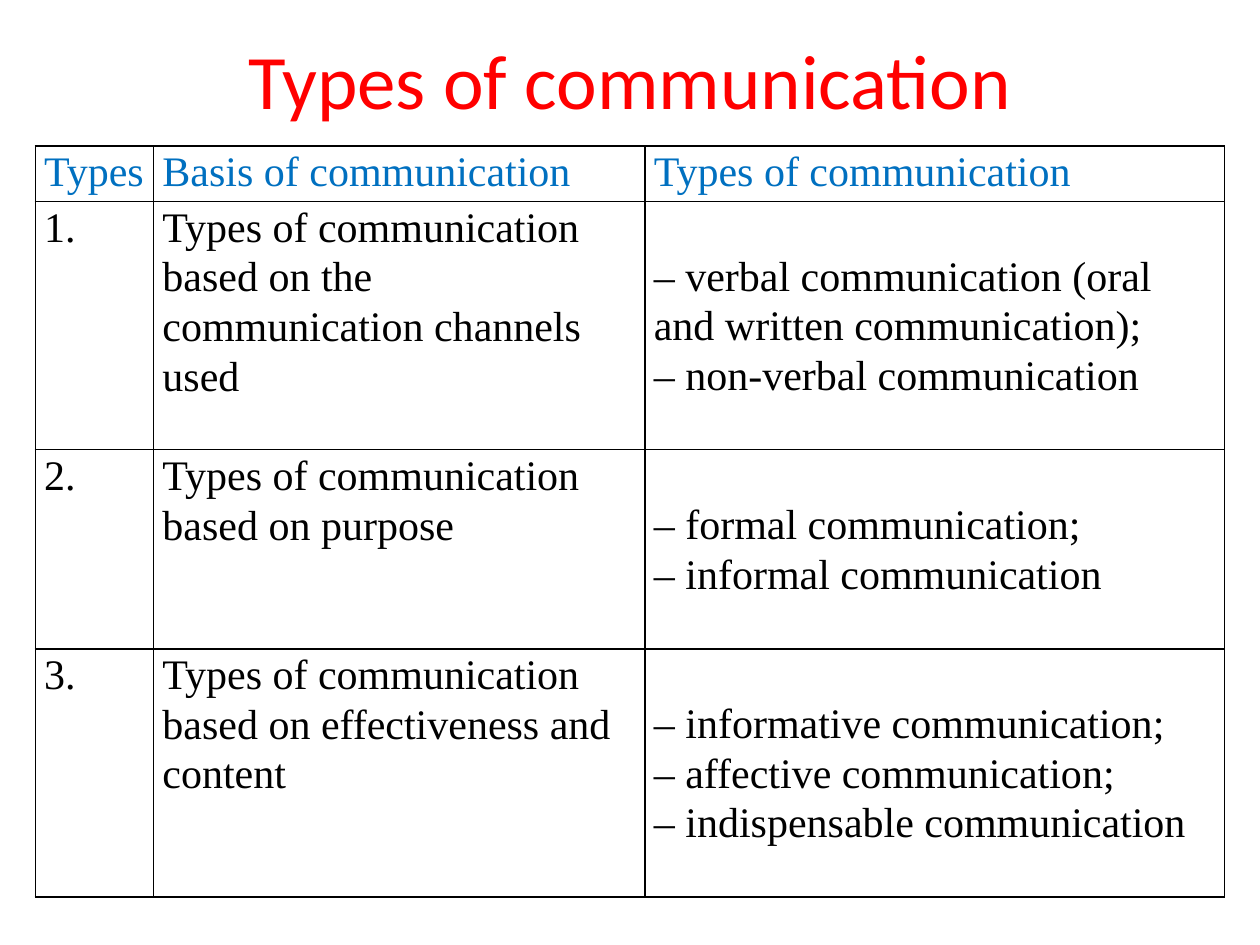
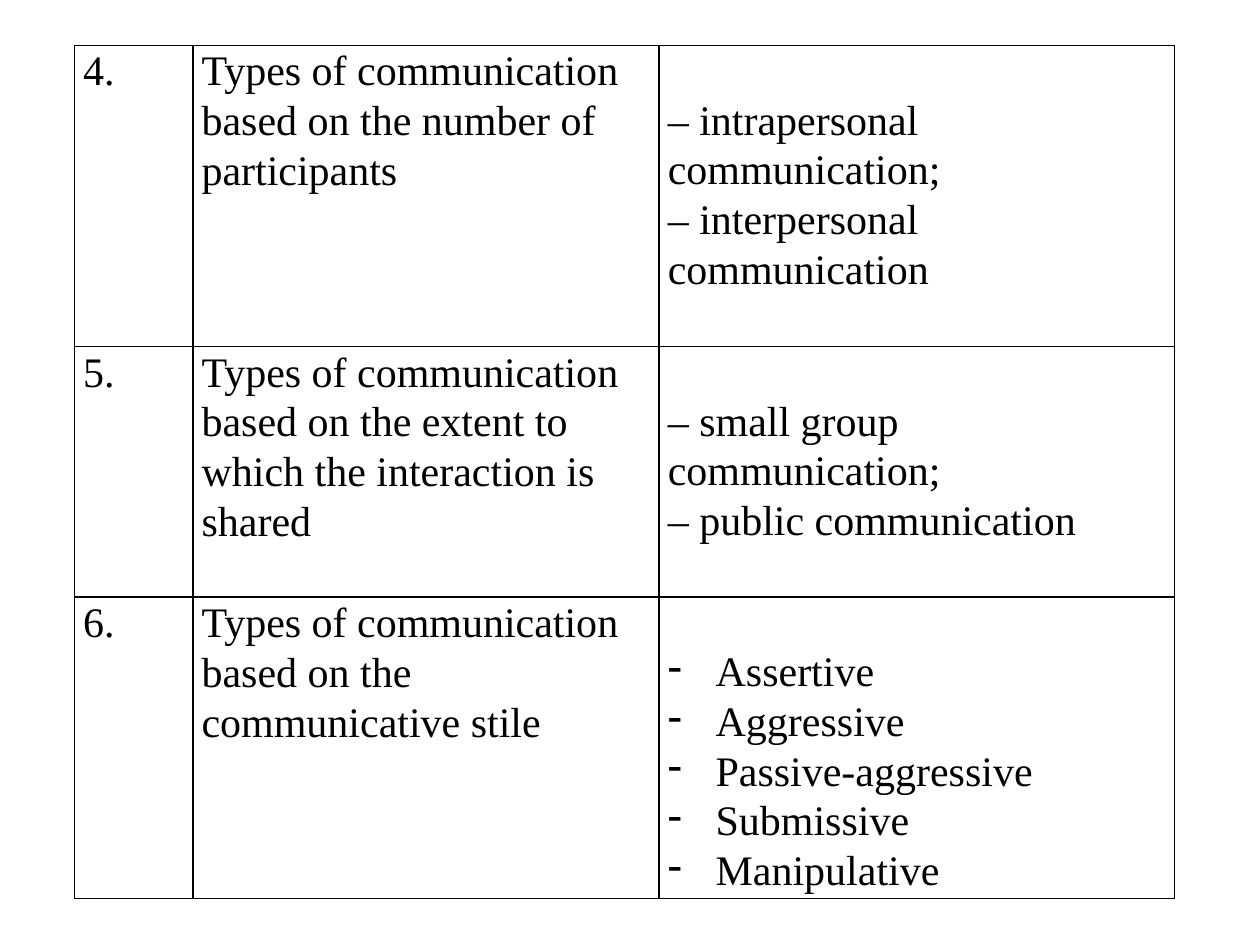
from dataclasses import dataclass

from lxml.etree import SubElement
from pptx import Presentation
from pptx.dml.color import RGBColor
from pptx.oxml.ns import qn
from pptx.util import Inches, Pt


@dataclass(frozen=True)
class Theme:
    title_color: RGBColor = RGBColor(0xFF, 0x00, 0x00)
    header_color: RGBColor = RGBColor(0x00, 0x70, 0xC0)
    text_color: RGBColor = RGBColor(0x00, 0x00, 0x00)
    border_color: str = "000000"
    title_font: str = "Calibri"
    table_font: str = "Times New Roman"
    title_size: int = 44
    table_size: int = 24
    line_spacing: float = 1.07
    line_height: float = 0.39


THEME = Theme()
BULLET = "- "


def add_borders(cell):
    properties = cell._tc.get_or_add_tcPr()
    for side in ("lnL", "lnR", "lnT", "lnB"):
        line = SubElement(properties, qn(f"a:{side}"), w=str(Pt(1)))
        fill = SubElement(line, qn("a:solidFill"))
        SubElement(fill, qn("a:srgbClr"), val=THEME.border_color)


def add_types_table(slide, left, top, widths, heights, rows, has_header=False):
    """Add a ruled table whose type lists start one line below the row's top."""
    frame = slide.shapes.add_table(
        len(rows), len(widths), Inches(left), Inches(top),
        Inches(sum(widths)), Inches(sum(heights)))
    table = frame.table
    table.first_row = table.horz_banding = False
    for column, width in zip(table.columns, widths):
        column.width = Inches(width)
    for row_index, (row, height, texts) in enumerate(zip(table.rows, heights, rows)):
        row.height = Inches(height)
        is_header = has_header and row_index == 0
        for column_index, (cell, text) in enumerate(zip(row.cells, texts)):
            is_type_list = column_index == 2 and not is_header
            add_borders(cell)
            cell.fill.background()
            cell.margin_left, cell.margin_right = Inches(0.07), Inches(0.05)
            cell.margin_top = Inches(THEME.line_height if is_type_list else 0)
            cell.margin_bottom = 0
            cell.text_frame.text = text
            for paragraph in cell.text_frame.paragraphs:
                paragraph.line_spacing = THEME.line_spacing
                if paragraph.text.startswith(BULLET):
                    paragraph.text = paragraph.text.removeprefix(BULLET)
                    properties = paragraph._p.get_or_add_pPr()
                    properties.set("marL", str(Inches(0.38)))
                    properties.set("indent", str(Inches(-0.38)))
                    SubElement(properties, qn("a:buChar"), char="-")
                font = paragraph.runs[0].font
                font.name = THEME.table_font
                font.size = Pt(THEME.table_size)
                font.color.rgb = THEME.header_color if is_header else THEME.text_color


presentation = Presentation()
presentation.slide_width, presentation.slide_height = Inches(10), Inches(7.5)
title_only, blank = presentation.slide_layouts[5], presentation.slide_layouts[6]

# Slide 1: channels, purpose and effectiveness
slide = presentation.slides.add_slide(title_only)
title = slide.shapes.title
title.left, title.top = Inches(0.5), Inches(0)
title.width, title.height = Inches(9), Inches(1.25)
title.text_frame.text = "Types of communication"
title_font = title.text_frame.paragraphs[0].runs[0].font
title_font.name = THEME.title_font
title_font.size = Pt(THEME.title_size)
title_font.color.rgb = THEME.title_color

add_types_table(
    slide, 0.28, 1.16, [0.94, 3.9, 4.6], [0.44, 1.97, 1.58, 1.97],
    [
        ("Types", "Basis of communication", "Types of communication"),
        ("1.", "Types of communication based on the communication channels used",
         "– verbal communication (oral and written communication);\n"
         "– non-verbal communication"),
        ("2.", "Types of communication based on purpose",
         "– formal communication;\n– informal communication"),
        ("3.", "Types of communication based on effectiveness and content",
         "– informative communication;\n– affective communication;\n"
         "– indispensable communication"),
    ],
    has_header=True)

# Slide 2: participants, sharing and style
slide = presentation.slides.add_slide(blank)
styles = ["Assertive", "Aggressive", "Passive-aggressive", "Submissive", "Manipulative"]
add_types_table(
    slide, 0.59, 0.36, [0.94, 3.7, 4.09], [2.39, 1.99, 2.39],
    [
        ("4.", "Types of communication based on the number of participants",
         "– intrapersonal communication;\n– interpersonal communication"),
        ("5.", "Types of communication based on the extent to which the interaction is shared",
         "– small group communication;\n– public communication"),
        ("6.", "Types of communication based on the communicative stile",
         "\n".join(BULLET + style for style in styles)),
    ])

presentation.save("out.pptx")
